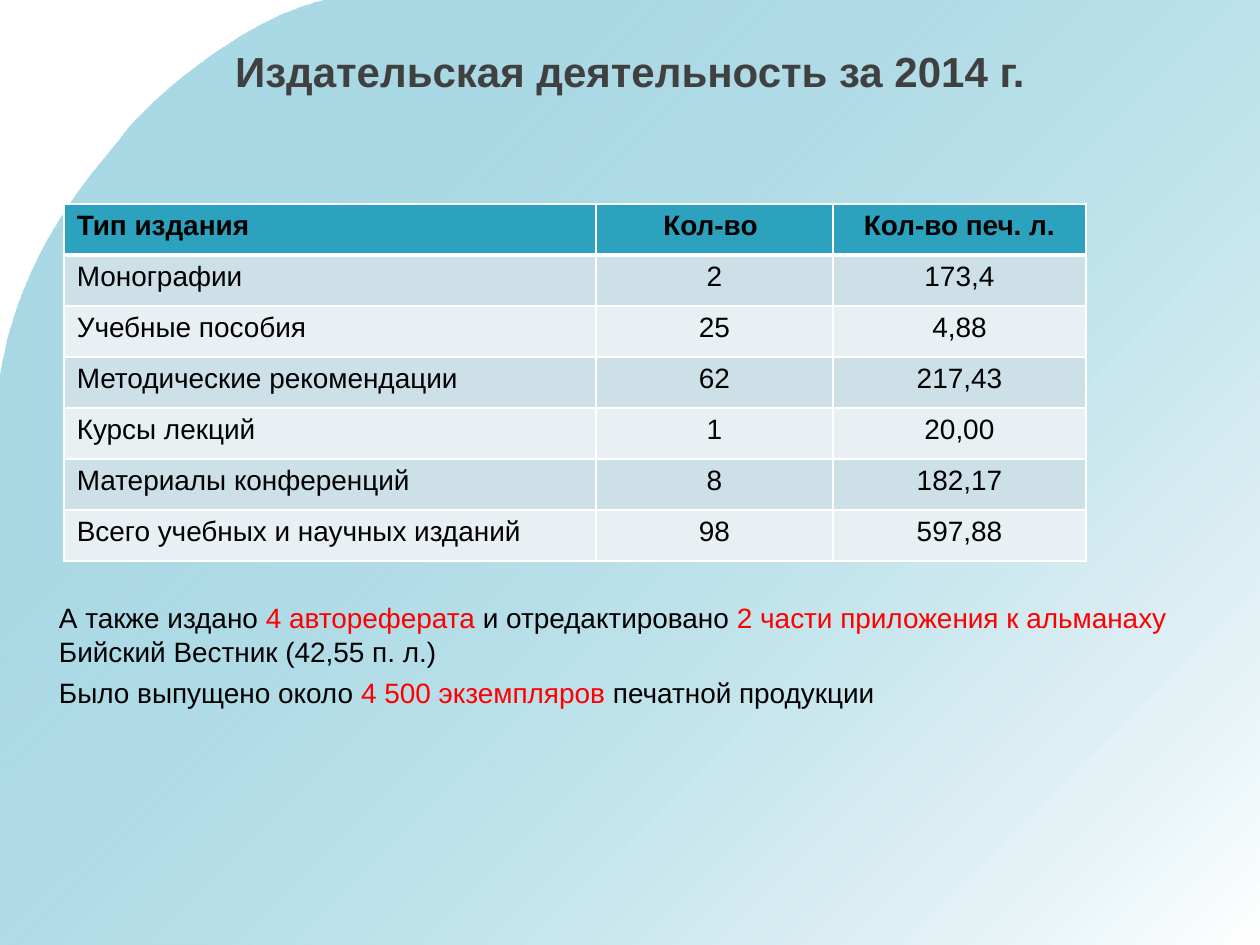
from lxml.etree import SubElement
from pptx import Presentation
from pptx.dml.color import RGBColor
from pptx.enum.text import MSO_ANCHOR, PP_ALIGN
from pptx.oxml.ns import qn
from pptx.util import Inches, Pt

COLORS = {
    "teal": "2DA2BF", "white": "FFFFFF", "black": "000000", "red": "FF0000",
    "title": "404040", "odd": "CDE0E8", "even": "E8F0F4",
}
FONT = "Arial"
TITLE = "Издательская деятельность за 2014 г."
ROWS = [
    ("Тип издания", "Кол-во ", "Кол-во печ. л."),
    ("Монографии", "2", "173,4"),
    ("Учебные пособия", "25", "4,88"),
    ("Методические рекомендации", "62", "217,43"),
    ("Курсы лекций", "1", "20,00"),
    ("Материалы конференций", "8", "182,17"),
    ("Всего учебных и научных изданий", "98", "597,88"),
]
WIDTHS = (4.22, 1.88, 2.01)
ROW_HEIGHT = 0.405
NOTES = [
    [("А также издано ", "black"), ("4 автореферата ", "red"),
     ("и отредактировано ", "black"),
     ("2 части приложения к альманаху ", "red"),
     ("Бийский Вестник (42,55 п. л.)", "black")],
    [("Было выпущено около ", "black"), ("4 500 экземпляров ", "red"),
     ("печатной продукции", "black")],
]
CURVES = [
    ((2.58, 0), (1.9, 0.16), (1.16, 0.83), (0.98, 1.07)),
    ((0.98, 1.07), (0.8, 1.32), (0.16, 1.94), (0, 3.01)),
]
CORNERS = [(0, 7.5), (10, 7.5), (10, 0)]
STEPS = 24


def rgb(name):
    return RGBColor.from_string(COLORS[name])


def add_run(para, text, color, size=16, bold=False):
    run = para.add_run()
    run.text = text
    font = run.font
    font.name, font.size, font.bold = FONT, Pt(size), bold
    font.color.rgb = rgb(color)


def add_box(slide, *place):
    frame = slide.shapes.add_textbox(*map(Inches, place)).text_frame
    frame.word_wrap = True
    return frame


def curve_point(curve, t):
    weights = ((1 - t) ** 3, 3 * t * (1 - t) ** 2, 3 * t * t * (1 - t), t ** 3)
    return tuple(Inches(sum(w * p[axis] for w, p in zip(weights, curve)))
                 for axis in (0, 1))


def add_sweep(slide):
    points = [curve_point(curve, step / STEPS)
              for curve in CURVES for step in range(1, STEPS + 1)]
    points += [(Inches(x), Inches(y)) for x, y in CORNERS]
    start = curve_point(CURVES[0], 0)
    builder = slide.shapes.build_freeform(*start, scale=1.0)
    builder.add_line_segments(points, close=True)
    sweep = builder.convert_to_shape()
    sweep.shadow.inherit = False
    sweep.line.fill.background()
    sweep.fill.gradient()
    sweep.fill.gradient_angle = 315
    for stop, name in zip(sweep.fill.gradient_stops, ("teal", "white")):
        stop.color.rgb = rgb(name)
    tint = next(sweep._element.spPr.iter(qn("a:srgbClr")))
    SubElement(tint, qn("a:alpha"), val="39000")


def add_border(cell, side, width):
    line = SubElement(cell._tc.get_or_add_tcPr(), qn(f"a:ln{side}"),
                      w=str(Pt(width)))
    fill = SubElement(line, qn("a:solidFill"))
    SubElement(fill, qn("a:srgbClr"), val=COLORS["white"])


def add_grid(slide):
    place = (0.51, 1.62, sum(WIDTHS), ROW_HEIGHT * len(ROWS))
    table = slide.shapes.add_table(
        len(ROWS), len(WIDTHS), *map(Inches, place)).table
    for column, width in zip(table.columns, WIDTHS):
        column.width = Inches(width)
    for r, row in enumerate(ROWS):
        table.rows[r].height = Inches(ROW_HEIGHT)
        shade = "teal" if r == 0 else ("even", "odd")[r % 2]
        for c, text in enumerate(row):
            cell = table.cell(r, c)
            for side in "LRTB":
                heavy = (r, side) in ((0, "B"), (1, "T"))
                add_border(cell, side, 3 if heavy else 1)
            cell.fill.solid()
            cell.fill.fore_color.rgb = rgb(shade)
            para = cell.text_frame.paragraphs[0]
            para.alignment = PP_ALIGN.CENTER if c else PP_ALIGN.LEFT
            add_run(para, text, "black", bold=r == 0)


def add_notes(slide):
    frame = add_box(slide, 0.37, 4.72, 9.4, 1)
    for i, runs in enumerate(NOTES):
        para = frame.add_paragraph() if i else frame.paragraphs[0]
        if i:
            para.space_before = Pt(4.5)
        for text, color in runs:
            add_run(para, text, color)


def main():
    """Build the slide on the year's publishing work."""
    deck = Presentation()
    deck.slide_width, deck.slide_height = Inches(10), Inches(7.5)
    slide = deck.slides.add_slide(deck.slide_layouts[6])
    add_sweep(slide)
    title = add_box(slide, 0.5, 0.25, 9, 0.62)
    title.vertical_anchor = MSO_ANCHOR.MIDDLE
    title.paragraphs[0].alignment = PP_ALIGN.CENTER
    add_run(title.paragraphs[0], TITLE, "title", 24, True)
    add_notes(slide)
    add_grid(slide)
    deck.save("out.pptx")


if __name__ == "__main__":
    main()
